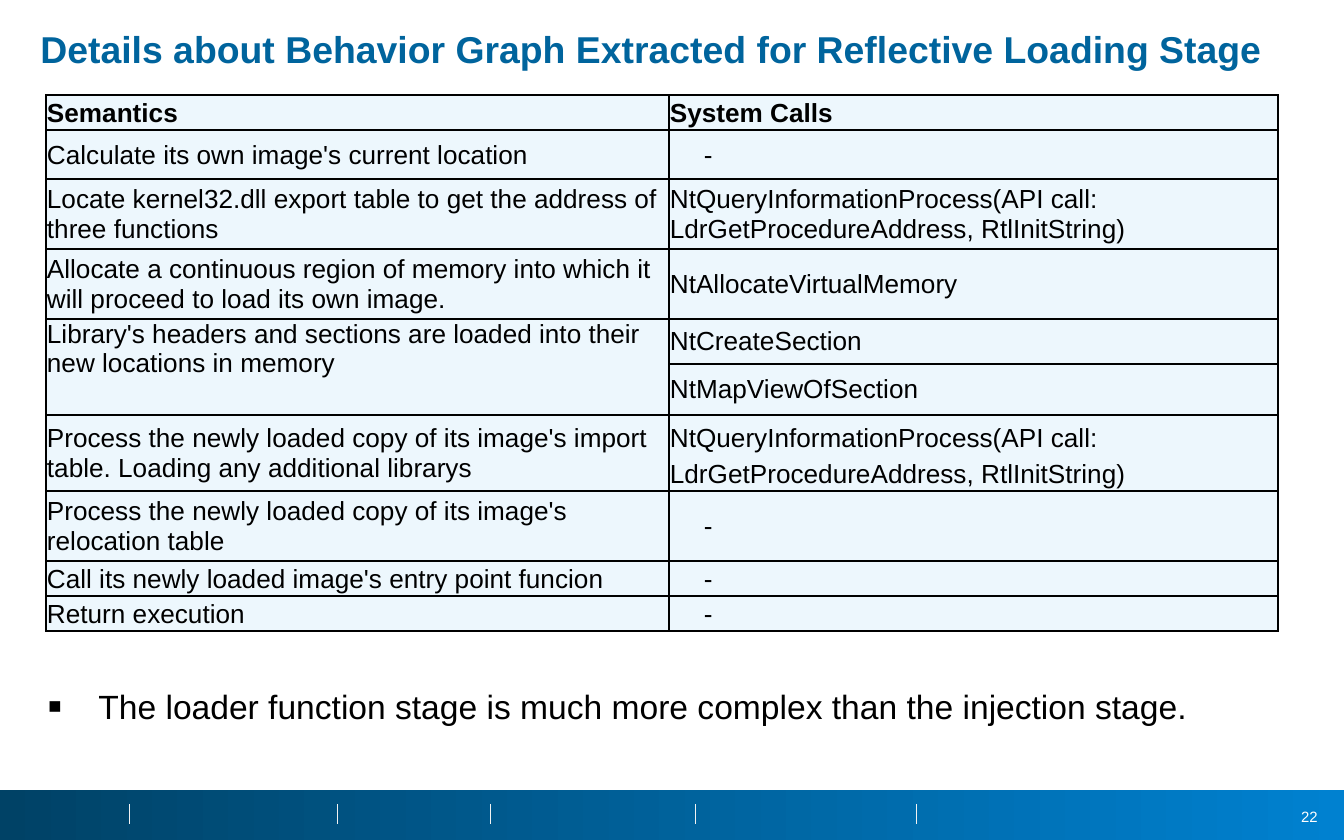
"""Build the slide on the behavior graph of the reflective loading stage."""
from itertools import product
from lxml.etree import SubElement
from pptx import Presentation
from pptx.dml.color import RGBColor
from pptx.enum.shapes import MSO_CONNECTOR as Link, MSO_SHAPE as Shape
from pptx.enum.text import MSO_ANCHOR as Anchor, MSO_AUTO_SIZE as Fit, PP_ALIGN as Align
from pptx.oxml import parse_xml
from pptx.oxml.ns import nsdecls, qn
from pptx.util import Pt

BLACK = RGBColor(0, 0, 0)
WHITE = RGBColor(0xFF, 0xFF, 0xFF)
BLUE = RGBColor(0x00, 0x64, 0x9D)
NAVY = RGBColor(0x00, 0x42, 0x66)
SKY = RGBColor(0x00, 0x81, 0xD0)
PALE = RGBColor(0xED, 0xF7, 0xFD)
GREY = RGBColor(0xF2, 0xF2, 0xF2)
SCALE = 914400 / 134.4


def px(*vals):
    return [round(v * SCALE) for v in vals]


def write(para, text, size, color, bold=False):
    run = para.add_run()
    run.text = text
    form = {"name": "Arial", "size": Pt(size), "bold": bold}
    for key, val in form.items():
        setattr(run.font, key, val)
    run.font.color.rgb = color


deck = Presentation()
deck.slide_width, deck.slide_height = px(1344, 840)
slide = deck.slides.add_slide(deck.slide_layouts[1])
shapes = slide.shapes

band = shapes.add_shape(Shape.RECTANGLE, *px(0, 790, 1344, 50))
band.shadow.inherit = False
band.line.fill.background()
band.fill.gradient()
band.fill.gradient_angle = 0
for stop, color, pos in zip(band.fill.gradient_stops, (NAVY, SKY), (0, 1)):
    stop.color.rgb = color
    stop.position = pos

for x in (129, 337, 490, 695, 916):
    tick = shapes.add_connector(Link.STRAIGHT, *px(x, 804, x, 824))
    tick.line.color.rgb = GREY
    tick.line.width = Pt(0.25)
    SubElement(tick._element.spPr, qn("a:effectLst"))

page = shapes.add_textbox(*px(1275, 800, 56, 32)).text_frame
page.word_wrap = True
page.vertical_anchor = Anchor.MIDDLE
page.paragraphs[0].alignment = Align.RIGHT
write(page.paragraphs[0], "22", 8, WHITE)

title, body = shapes.title, slide.placeholders[1]
for box, spot in ((title, (27, 27, 1340, 48)), (body, (35, 659, 1320, 67))):
    for key, val in zip(("left", "top", "width", "height"), px(*spot)):
        setattr(box, key, val)

title.text_frame.vertical_anchor = Anchor.MIDDLE
title.text_frame.auto_size = Fit.NONE
head = title.text_frame.paragraphs[0]
head.alignment = Align.LEFT
head.line_spacing = 0.9
write(head, "Details about Behavior Graph Extracted for Reflective Loading Stage",
      20, BLUE, True)

body.text_frame.auto_size = Fit.SHAPE_TO_FIT_TEXT
note = body.text_frame.paragraphs[0]
props = note._p.get_or_add_pPr()
for key, val in zip(("marL", "indent"), px(50, -52)):
    props.set(key, str(val))
for mark in (f'<a:buClr {nsdecls("a")}><a:srgbClr val="{BLACK}"/></a:buClr>',
             f'<a:buSzPct {nsdecls("a")} val="65000"/>',
             f'<a:buFont {nsdecls("a")} typeface="Arial"/>',
             f'<a:buChar {nsdecls("a")} char="■"/>'):
    props.append(parse_xml(mark))
note.line_spacing = 1.5
note.space_before = Pt(0)
write(note, "The loader function stage is much more complex than the injection stage.",
      18, BLACK)

QUERY = "NtQueryInformationProcess(API call: LdrGetProcedureAddress, RtlInitString)"
ROWS = [
    (35, "Semantics", "System Calls"),
    (49, "Calculate its own image's current location", "-"),
    (70, "Locate kernel32.dll export table to get the address of three functions", QUERY),
    (70, "Allocate a continuous region of memory into which it will proceed "
         "to load its own image.", "NtAllocateVirtualMemory"),
    (45, "Library's headers and sections are loaded into their new locations in memory",
     "NtCreateSection"),
    (51, "", "NtMapViewOfSection"),
    (70, "Process the newly loaded copy of its image's import table. "
         "Loading any additional librarys", QUERY),
    (70, "Process the newly loaded copy of its image's relocation table", "-"),
    (35, "Call its newly loaded image's entry point funcion", "-"),
    (35, "Return execution", "-"),
]
high = sum(row[0] for row in ROWS)
table = shapes.add_table(len(ROWS), 2, *px(46, 95, 1232, high)).table
for col, wide in zip(table.columns, px(623, 609)):
    col.width = wide
for line, row in zip(table.rows, ROWS):
    line.height = px(row[0])[0]

pad = dict(zip(("margin_left", "margin_top", "margin_right", "margin_bottom"),
               px(1, 1, 1, 0)))
for r, c in product(range(len(ROWS)), range(2)):
    cell = table.cell(r, c)
    for key, val in {**pad, "vertical_anchor": Anchor.MIDDLE}.items():
        setattr(cell, key, val)
    for side in "LRTB":
        cell._tc.get_or_add_tcPr().append(parse_xml(
            f'<a:ln{side} {nsdecls("a")} w="{Pt(1)}"><a:solidFill>'
            f'<a:srgbClr val="{BLACK}"/></a:solidFill></a:ln{side}>'))
    cell.fill.solid()
    cell.fill.fore_color.rgb = PALE
    text, para = ROWS[r][c + 1], cell.text_frame.paragraphs[0]
    if text == "-":
        para._p.get_or_add_pPr().set("marL", str(px(34)[0]))
    if text:
        write(para, text, 14, BLACK, r == 0)

table.cell(4, 0).merge(table.cell(5, 0))
table.cell(4, 0).vertical_anchor = Anchor.TOP
table.cell(6, 1).text_frame.paragraphs[0].line_spacing = 1.2

deck.save("out.pptx")
